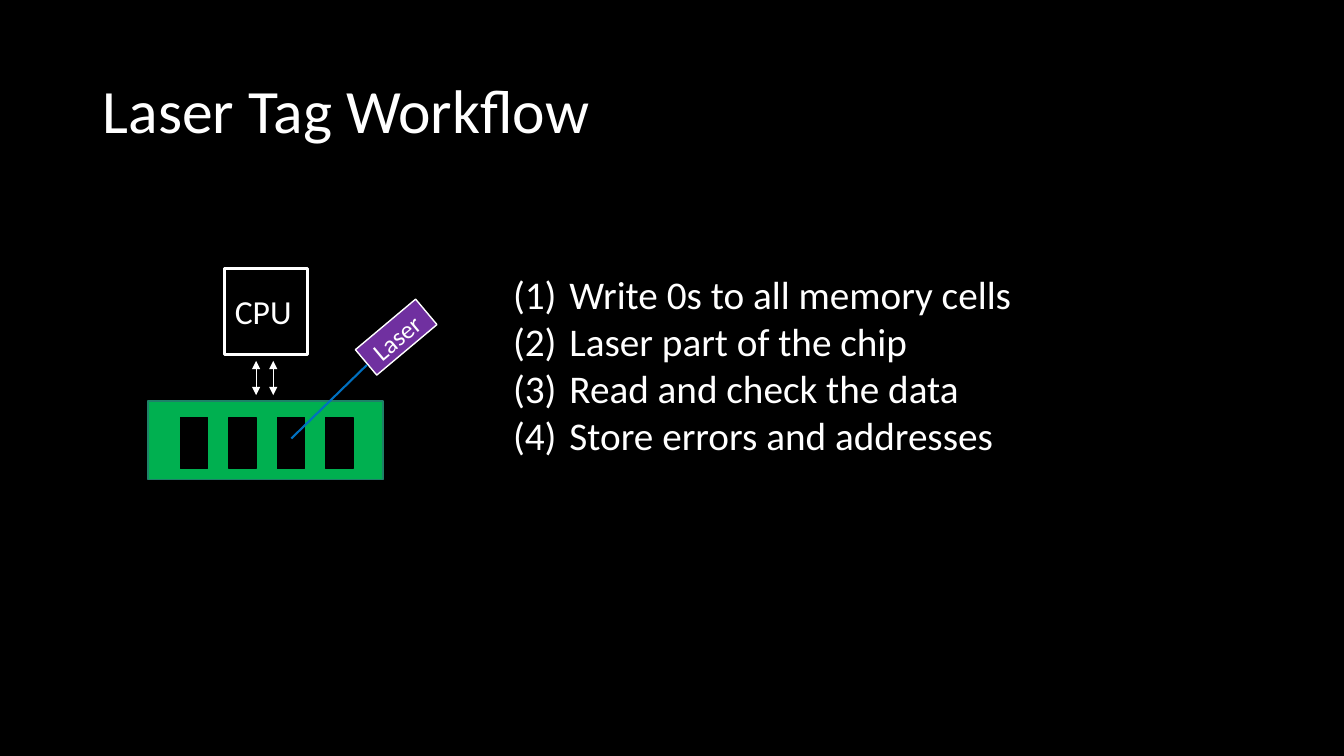
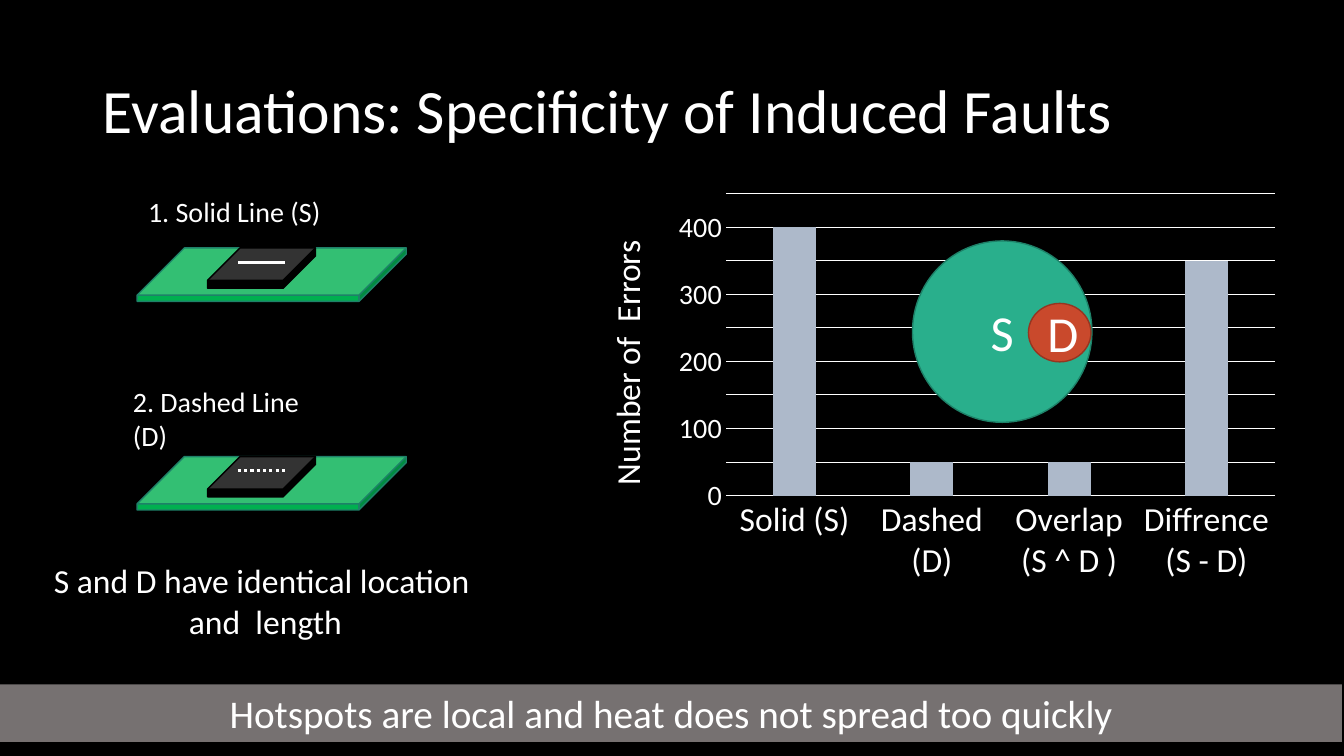
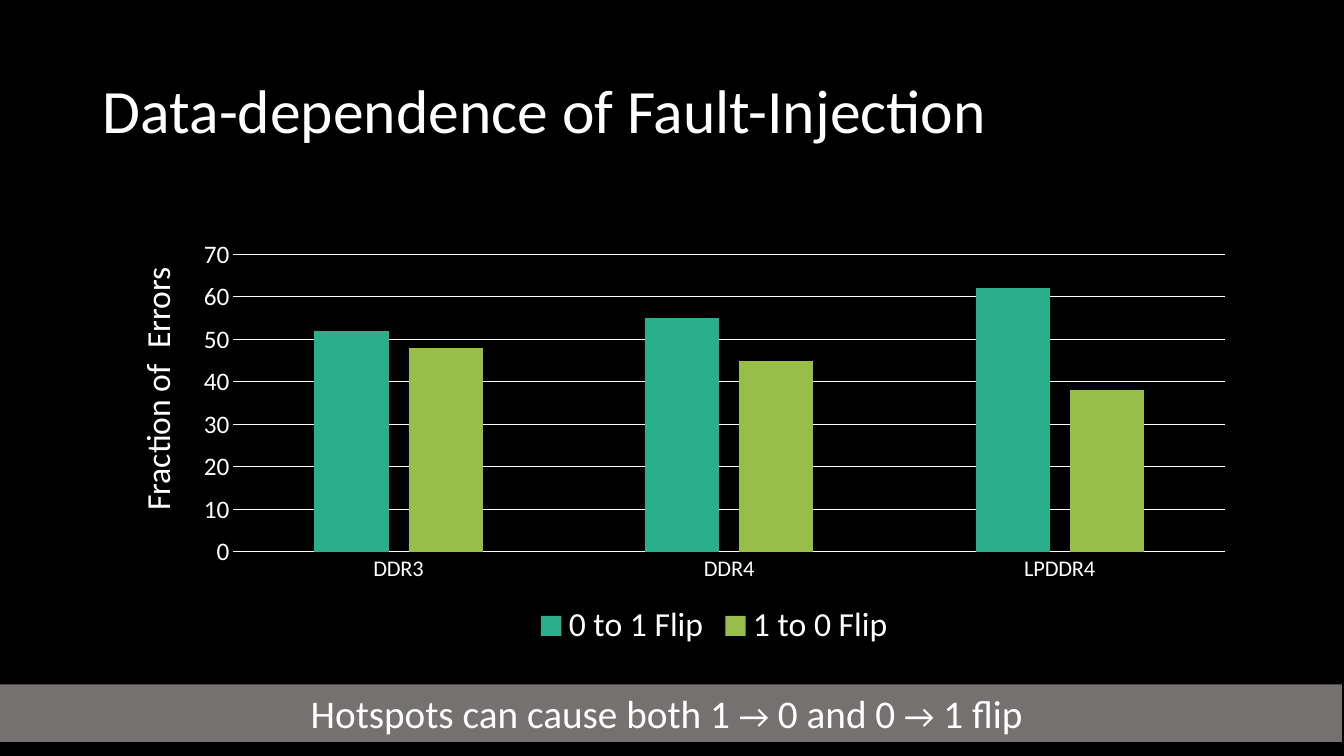
"""Builds three slides on laser fault tests of memory chips."""
from dataclasses import dataclass
from itertools import groupby
from typing import NamedTuple, Optional

from lxml.etree import SubElement
from pptx import Presentation
from pptx.chart.data import CategoryChartData
from pptx.dml.color import RGBColor
from pptx.enum.chart import XL_CHART_TYPE, XL_LEGEND_POSITION, XL_TICK_MARK
from pptx.enum.dml import MSO_LINE
from pptx.enum.shapes import MSO_CONNECTOR, MSO_SHAPE
from pptx.enum.text import MSO_ANCHOR, MSO_AUTO_SIZE, PP_ALIGN
from pptx.oxml.ns import qn
from pptx.shapes.autoshape import Shape
from pptx.shapes.connector import Connector
from pptx.slide import Slide
from pptx.util import Inches, Pt

FONT = "Calibri"
WHITE, BLACK, GREY = "FFFFFF", "000000", "767171"
GREEN, EDGE, TEAL, LIME = "00B050", "1E8168", "29AF8C", "97BE49"
STEEL, RED, RUST = "ADB9CA", "C9492C", "953621"
PURPLE, BLUE = "7030A0", "0070C0"


class Box(NamedTuple):
    left: float
    top: float
    width: float
    height: float


class Point(NamedTuple):
    x: float
    y: float


@dataclass
class Series:
    name: str
    values: tuple[int, ...]
    color: str


@dataclass
class Plot:
    box: Box
    cats: tuple[str, ...]
    series: tuple[Series, ...]
    top: int
    step: int
    cat_size: int
    val_size: int
    key_size: int = 0


@dataclass
class Board:
    label: str
    spot: Point
    top: float
    dash: Optional[MSO_LINE] = None


BOARDS = (
    Board("1. Solid Line (S)", Point(1.37, 1.88), 2.46),
    Board("2. Dashed Line (D)", Point(1.22, 3.77), 4.53, MSO_LINE.ROUND_DOT),
)
STEPS = (
    "Write 0s to all memory cells",
    "Laser part of the chip",
    "Read and check the data",
    "Store errors and addresses",
)
ERRORS = Plot(
    Box(6.61, 1.84, 6.16, 4.01),
    ("Solid (S)", "Dashed (D)", "Overlap (S ^ D )", "Diffrence (S - D)"),
    (Series("Series 1", (400, 50, 50, 350), STEEL),),
    top=450, step=50, cat_size=24, val_size=20,
)
FLIPS = Plot(
    Box(1.81, 2.29, 10.55, 4.19),
    ("DDR3", "DDR4", "LPDDR4"),
    (Series("0 to 1 Flip", (52, 55, 62), TEAL),
     Series("1 to 0 Flip", (48, 45, 38), LIME)),
    top=70, step=10, cat_size=16, val_size=18, key_size=24,
)


def rgb(code: str) -> RGBColor:
    """Turn a hex string into a colour."""
    return RGBColor.from_string(code)


def style(font, size: float) -> None:
    """Set the shared font, white, at a size."""
    font.name = FONT
    font.size = Pt(size)
    font.color.rgb = rgb(WHITE)


def write(shape, text: str, size: float, align=PP_ALIGN.LEFT, wrap: bool = True) -> None:
    """Fill a shape with styled text."""
    frame = shape.text_frame
    frame.word_wrap = wrap
    frame.text = text
    for para in frame.paragraphs:
        para.alignment = align
        for run in para.runs:
            style(run.font, size)


def label(slide: Slide, box: Box, text: str, size: float, align=PP_ALIGN.LEFT,
          wrap: bool = False) -> Shape:
    """Add a text box."""
    shape = slide.shapes.add_textbox(*map(Inches, box))
    write(shape, text, size, align, wrap)
    return shape


def draw(slide: Slide, kind: MSO_SHAPE, box: Box, fill: Optional[str],
         edge: Optional[str] = None, width: float = 1) -> Shape:
    """Add a preset shape with its fill and outline."""
    shape = slide.shapes.add_shape(kind, *map(Inches, box))
    shape.shadow.inherit = False
    if fill:
        shape.fill.solid()
        shape.fill.fore_color.rgb = rgb(fill)
    else:
        shape.fill.background()
    if edge:
        shape.line.color.rgb = rgb(edge)
        shape.line.width = Pt(width)
    else:
        shape.line.fill.background()
    return shape


def link(slide: Slide, start: Point, end: Point, color: str, width: float,
         heads: bool = False) -> Connector:
    """Add a straight line, with arrowheads at both ends if asked."""
    line = slide.shapes.add_connector(
        MSO_CONNECTOR.STRAIGHT, *map(Inches, (*start, *end)))
    line.line.color.rgb = rgb(color)
    line.line.width = Pt(width)
    if heads:
        for tag in ("a:headEnd", "a:tailEnd"):
            SubElement(line.line._get_or_add_ln(), qn(tag), type="triangle")
    SubElement(line._element.spPr, qn("a:effectLst"))
    return line


def start(deck, title: str) -> Slide:
    """Add a title-only slide."""
    slide = deck.slides.add_slide(deck.slide_layouts[5])
    head = slide.shapes.title
    head.left, head.top, head.width, head.height = map(
        Inches, (0.92, 0.4, 11.5, 1.45))
    write(head, title, 44)
    frame = head.text_frame
    frame.auto_size = MSO_AUTO_SIZE.NONE
    frame.vertical_anchor = MSO_ANCHOR.MIDDLE
    frame.paragraphs[0].line_spacing = 0.9
    return slide


def band(slide: Slide, text: str) -> None:
    """Add the closing band, with arrows set smaller than words."""
    shape = draw(slide, MSO_SHAPE.RECTANGLE, Box(0, 6.79, 13.31, 0.57), GREY)
    para = shape.text_frame.paragraphs[0]
    para.alignment = PP_ALIGN.CENTER
    for arrow, chars in groupby(text, lambda char: char == "→"):
        run = para.add_run()
        run.text = "".join(chars)
        style(run.font, 24 if arrow else 28)


def number(shape: Shape) -> None:
    """Number the paragraphs as (1), (2) and so on."""
    indent = Inches(0.56)
    for para in shape.text_frame.paragraphs:
        props = para._p.get_or_add_pPr()
        props.set("marL", str(indent))
        props.set("indent", str(-indent))
        SubElement(props, qn("a:buFont"), typeface="+mj-lt")
        SubElement(props, qn("a:buAutoNum"), type="arabicParenBoth")


def graph(slide: Slide, plot: Plot) -> None:
    """Add a clustered column chart."""
    data = CategoryChartData()
    data.categories = plot.cats
    for item in plot.series:
        data.add_series(item.name, item.values)
    chart = slide.shapes.add_chart(
        XL_CHART_TYPE.COLUMN_CLUSTERED, *map(Inches, plot.box), data).chart
    style(chart.font, 10)
    chart.has_title = False
    chart.has_legend = plot.key_size > 0
    if chart.has_legend:
        chart.legend.position = XL_LEGEND_POSITION.BOTTOM
        chart.legend.include_in_layout = False
        style(chart.legend.font, plot.key_size)
    bars = chart.plots[0]
    bars.gap_width, bars.overlap = 219, -27
    bars.vary_by_categories = False
    for item, cols in zip(plot.series, bars.series):
        cols.format.fill.solid()
        cols.format.fill.fore_color.rgb = rgb(item.color)
    base, scale = chart.category_axis, chart.value_axis
    for axis, size in ((base, plot.cat_size), (scale, plot.val_size)):
        axis.major_tick_mark = axis.minor_tick_mark = XL_TICK_MARK.NONE
        style(axis.tick_labels.font, size)
    scale.minimum_scale, scale.maximum_scale = 0, plot.top
    scale.major_unit = plot.step
    scale.format.line.fill.background()
    for line in (base.format.line, scale.major_gridlines.format.line):
        line.color.rgb = rgb(WHITE)
        line.width = Pt(0.75)


def turn(slide: Slide, box: Box, text: str) -> None:
    """Add an axis title that reads upward."""
    label(slide, box, text, 24, PP_ALIGN.CENTER).rotation = 270


def flow(deck) -> None:
    """Build the workflow slide."""
    slide = start(deck, "Laser Tag Workflow")
    number(label(slide, Box(4.99, 2.63, 5.2, 1.99), "\n".join(STEPS), 28))
    rect = MSO_SHAPE.RECTANGLE
    draw(slide, rect, Box(1.47, 3.98, 2.33, 0.78), GREEN, EDGE)
    for col in range(4):
        draw(slide, rect, Box(1.79 + 0.48 * col, 4.14, 0.27, 0.51), BLACK, BLACK)
    core = draw(slide, rect, Box(2.23, 2.66, 0.82, 0.86), None, WHITE, 2.25)
    write(core, "CPU", 24)
    for x in (2.54, 2.71):
        link(slide, Point(x, 3.58), Point(x, 3.92), WHITE, 0.5, heads=True)
    laser = draw(slide, rect, Box(3.54, 3.18, 0.78, 0.33), PURPLE, WHITE)
    laser.rotation = 320
    write(laser, "Laser", 18, PP_ALIGN.CENTER)
    tip = Point(3.64, 3.62)
    beam = link(slide, tip, Point(2.89, 4.35), BLUE, 1.5)
    beam.begin_connect(laser, 1)
    beam.begin_x, beam.begin_y = map(Inches, tip)


def faults(deck) -> None:
    """Build the slide on where faults occur."""
    slide = start(deck, "Evaluations: Specificity of Induced Faults")
    for board in BOARDS:
        base = draw(slide, MSO_SHAPE.CUBE, Box(1.36, board.top, 2.67, 0.53), GREEN, EDGE)
        base.adjustments[0] = 0.885
        chip = draw(slide, MSO_SHAPE.CUBE, Box(2.06, board.top, 1.07, 0.4), BLACK, BLACK)
        chip.adjustments[0] = 0.804
        y = board.top + 0.14
        mark = link(slide, Point(2.36, y), Point(2.83, y), WHITE, 2.25)
        if board.dash:
            mark.line.dash_style = board.dash
        label(slide, Box(*board.spot, 2.2, 0.44), board.label, 20)
    graph(slide, ERRORS)
    band(slide, "Hotspots are local and heat does not spread too quickly")
    turn(slide, Box(4.89, 3.35, 2.65, 0.5), "Number of  Errors")
    label(slide, Box(0.41, 5.51, 4.37, 0.91),
          "S and D have identical location\n and  length", 24, PP_ALIGN.CENTER, True)
    for text, box, fill, edge in (
        ("S", Box(9.05, 2.39, 1.78, 1.8), TEAL, EDGE),
        ("D", Box(10.2, 3.01, 0.62, 0.58), RED, RUST),
    ):
        disc = draw(slide, MSO_SHAPE.OVAL, box, fill, edge)
        write(disc, text, 36, PP_ALIGN.CENTER)


def flips(deck) -> None:
    """Build the slide on bit flips."""
    slide = start(deck, "Data-dependence of Fault-Injection")
    graph(slide, FLIPS)
    band(slide, "Hotspots can cause both 1 → 0 and 0 → 1 flip ")
    turn(slide, Box(0.24, 3.61, 2.63, 0.5), "Fraction of  Errors")


def main() -> None:
    """Build and save the deck."""
    deck = Presentation()
    deck.slide_width, deck.slide_height = Inches(13.33), Inches(7.5)
    fill = deck.slide_master.background.fill
    fill.solid()
    fill.fore_color.rgb = rgb(BLACK)
    for build in (flow, faults, flips):
        build(deck)
    deck.save("out.pptx")


if __name__ == "__main__":
    main()
